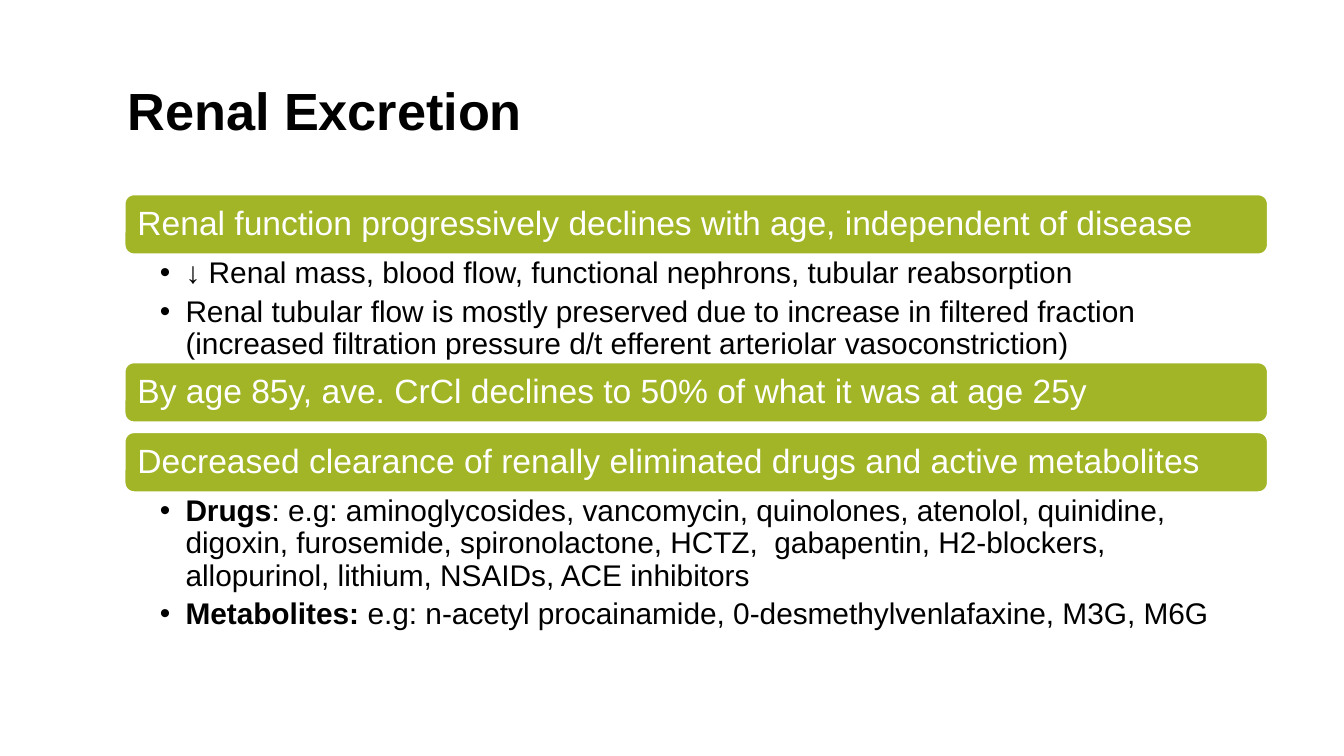
from dataclasses import dataclass

from lxml import etree
from pptx import Presentation
from pptx.dml.color import RGBColor
from pptx.enum.shapes import MSO_SHAPE
from pptx.enum.text import MSO_ANCHOR, PP_ALIGN
from pptx.oxml.ns import qn
from pptx.slide import Slide
from pptx.text.text import TextFrame
from pptx.util import Inches, Pt

ROUNDED = MSO_SHAPE.ROUNDED_RECTANGLE
MIDDLE = MSO_ANCHOR.MIDDLE
TOP = MSO_ANCHOR.TOP
LEFT = PP_ALIGN.LEFT


@dataclass(frozen=True)
class Theme:
    font: str = "Arial"
    ink: RGBColor = RGBColor(0x00, 0x00, 0x00)
    paper: RGBColor = RGBColor(0xFF, 0xFF, 0xFF)
    bar: RGBColor = RGBColor(0xA2, 0xB5, 0x26)
    title_size: int = 28
    heading_size: int = 18
    detail_size: int = 16
    line_spacing: float = 0.9
    detail_gap: float = 3.5


@dataclass(frozen=True)
class Detail:
    lead: str  # bold opening words
    rest: str


@dataclass(frozen=True)
class Section:
    heading: str
    space_below: float  # inches from this bar to the next
    details: tuple[Detail, ...] = ()


THEME = Theme()
SLIDE_WIDTH = Inches(10)
SLIDE_HEIGHT = SLIDE_WIDTH * 9 // 16
LIST_LEFT, LIST_TOP, LIST_WIDTH = 0.92, 1.44, 8.52
BAR_HEIGHT = 0.46
BULLET_INDENT = 0.19

SECTIONS = (
    Section("Renal function progressively declines with age, independent of disease", 0.79, (
        Detail("↓", " Renal mass, blood flow, functional nephrons, tubular reabsorption"),
        Detail("", "Renal tubular flow is mostly preserved due to increase in filtered fraction "
                   "(increased filtration pressure d/t efferent arteriolar vasoconstriction)"),
    )),
    Section("By age 85y, ave. CrCl declines to 50% of what it was at age 25y", 0.06),
    Section("Decreased clearance of renally eliminated drugs and active metabolites", 1.02, (
        Detail("Drugs", ": e.g: aminoglycosides, vancomycin, quinolones, atenolol, quinidine, "
                        "digoxin, furosemide, spironolactone, HCTZ,  gabapentin, H2-blockers, "
                        "allopurinol, lithium, NSAIDs, ACE inhibitors"),
        Detail("Metabolites: ", "e.g: n-acetyl procainamide, 0-desmethylvenlafaxine, M3G, M6G"),
    )),
)


def set_frame(frame: TextFrame, anchor: MSO_ANCHOR, left: float, right: float, edge: float) -> None:
    frame.word_wrap = True
    frame.vertical_anchor = anchor
    frame.margin_left, frame.margin_right = Inches(left), Inches(right)
    frame.margin_top = frame.margin_bottom = Inches(edge)


def style_paragraph(paragraph, size: int, color: RGBColor) -> None:
    paragraph.alignment = LEFT
    paragraph.line_spacing = THEME.line_spacing
    paragraph.font.name = THEME.font
    paragraph.font.size = Pt(size)
    paragraph.font.color.rgb = color


def add_bullet(paragraph) -> None:
    properties = paragraph._p.get_or_add_pPr()
    properties.set("marL", str(Inches(BULLET_INDENT)))
    properties.set("indent", str(-Inches(BULLET_INDENT)))
    etree.SubElement(properties, qn("a:buFont")).set("typeface", THEME.font)
    etree.SubElement(properties, qn("a:buChar")).set("char", "•")


def draw_title(slide: Slide, text: str) -> None:
    box = slide.shapes.add_textbox(Inches(0.85), Inches(0.34), Inches(8.89), Inches(1.01))
    set_frame(box.text_frame, MIDDLE, 0.1, 0.1, 0)
    paragraph = box.text_frame.paragraphs[0]
    paragraph.text = text
    style_paragraph(paragraph, THEME.title_size, THEME.ink)
    paragraph.font.bold = True


def draw_bar(slide: Slide, heading: str, top: float) -> None:
    bar = slide.shapes.add_shape(
        ROUNDED, Inches(LIST_LEFT), Inches(top), Inches(LIST_WIDTH), Inches(BAR_HEIGHT))
    bar.shadow.inherit = False
    bar.fill.solid()
    bar.fill.fore_color.rgb = THEME.bar
    bar.line.color.rgb = THEME.paper
    bar.line.width = Pt(2)
    # The preset's text area already sits 0.02 inside the corners
    set_frame(bar.text_frame, MIDDLE, 0.08, 0.08, 0.05)
    paragraph = bar.text_frame.paragraphs[0]
    paragraph.text = heading
    style_paragraph(paragraph, THEME.heading_size, THEME.paper)


def draw_details(slide: Slide, details: tuple[Detail, ...], top: float, height: float) -> None:
    box = slide.shapes.add_textbox(
        Inches(LIST_LEFT), Inches(top), Inches(LIST_WIDTH), Inches(height))
    frame = box.text_frame
    set_frame(frame, TOP, 0.27, 0.12, 0.02)
    for index, detail in enumerate(details):
        paragraph = frame.add_paragraph() if index else frame.paragraphs[0]
        add_bullet(paragraph)
        style_paragraph(paragraph, THEME.detail_size, THEME.ink)
        paragraph.space_after = Pt(THEME.detail_gap)
        if detail.lead:
            lead = paragraph.add_run()
            lead.text = detail.lead
            lead.font.bold = True
        paragraph.add_run().text = detail.rest


def main() -> None:
    presentation = Presentation()
    presentation.slide_width, presentation.slide_height = SLIDE_WIDTH, SLIDE_HEIGHT
    slide = presentation.slides.add_slide(presentation.slide_layouts[6])

    draw_title(slide, "Renal Excretion")

    # Heading bars, each followed by its details
    top = LIST_TOP
    for section in SECTIONS:
        draw_bar(slide, section.heading, top)
        top += BAR_HEIGHT
        if section.details:
            draw_details(slide, section.details, top, section.space_below)
        top += section.space_below

    presentation.save("out.pptx")


if __name__ == "__main__":
    main()
